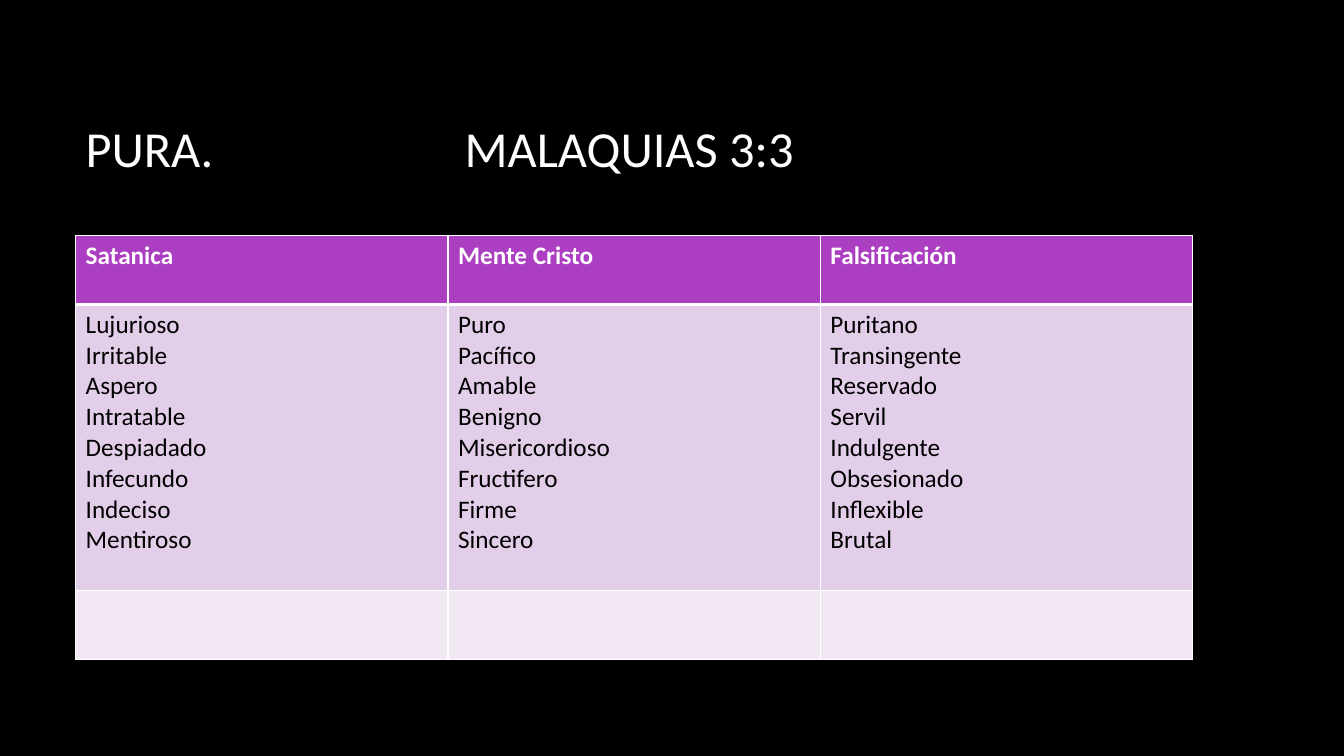
import pptx
import pptx.util
import pptx.dml.color
import pptx.enum.text
import pptx.oxml
import pptx.oxml.ns
from lxml import etree

Inches, Pt = pptx.util.Inches, pptx.util.Pt

# Content
TITLE = ("PURA.", "MALAQUIAS 3:3")
COLUMNS = {
    "Satanica": ["Lujurioso", "Irritable", "Aspero", "Intratable",
                 "Despiadado", "Infecundo", "Indeciso", "Mentiroso"],
    "Mente Cristo": ["Puro", "Pacífico", "Amable", "Benigno",
                     "Misericordioso", "Fructifero", "Firme", "Sincero"],
    "Falsificación": ["Puritano", "Transingente", "Reservado", "Servil",
                      "Indulgente", "Obsesionado", "Inflexible", "Brutal"],
}
COLORS = {"background": "000000", "light": "FFFFFF", "dark": "000000",
          "header": "AC3EC1", "body": "E3CEE9", "footer": "F1E8F4"}
FONT = "Calibri"
LEFT, WIDTH = 0.75, 11.08
TITLE_TOP, TITLE_HEIGHT, TITLE_TAB = 0.67, 1.59, 3.76
TABLE_TOP = 2.34
# Each row: height, fill, text colour, bold
ROWS = [(0.68, "header", "light", True),
        (2.84, "body", "dark", False),
        (0.68, "footer", "dark", False)]


def rgb(name):
    return pptx.dml.color.RGBColor.from_string(COLORS[name])


def style(p, size, color, bold=False):
    p.font.name, p.font.size, p.font.bold = FONT, Pt(size), bold
    p.font.color.rgb = rgb(color)


def add_borders(cell, bottom):
    tcPr = cell._tc.get_or_add_tcPr()
    for i, (side, width) in enumerate(
            [("lnL", 1), ("lnR", 1), ("lnT", 1), ("lnB", bottom)]):
        ln = pptx.oxml.parse_xml(
            f'<a:{side} {pptx.oxml.ns.nsdecls("a")} w="{Pt(width)}">'
            f'<a:solidFill><a:srgbClr val="{COLORS["light"]}"/></a:solidFill>'
            f'</a:{side}>')
        tcPr.insert(i, ln)


prs = pptx.Presentation()
prs.slide_width, prs.slide_height = Inches(13.33), Inches(7.5)
s = prs.slides.add_slide(prs.slide_layouts[6])
s.background.fill.solid()
s.background.fill.fore_color.rgb = rgb("background")

# Title, its second part set at a tab stop
sp = s.shapes.add_textbox(Inches(LEFT), Inches(TITLE_TOP),
                          Inches(WIDTH), Inches(TITLE_HEIGHT))
tf = sp.text_frame
tf.word_wrap = True
tf.vertical_anchor = pptx.enum.text.MSO_ANCHOR.MIDDLE
p = tf.paragraphs[0]
p.text = "\t".join(TITLE)
tabs = etree.SubElement(p._p.get_or_add_pPr(), pptx.oxml.ns.qn("a:tabLst"))
etree.SubElement(tabs, pptx.oxml.ns.qn("a:tab"),
                 pos=str(Inches(TITLE_TAB)), algn="l")
style(p, 36, "light")

# Table
height = sum(row[0] for row in ROWS)
table = s.shapes.add_table(len(ROWS), len(COLUMNS), Inches(LEFT),
                           Inches(TABLE_TOP), Inches(WIDTH),
                           Inches(height)).table
for r, (row_height, fill, color, bold) in enumerate(ROWS):
    table.rows[r].height = Inches(row_height)
    for c, (heading, words) in enumerate(COLUMNS.items()):
        cell = table.cell(r, c)
        cell.text = (heading, "\n".join(words), "")[r]
        cell.fill.solid()
        cell.fill.fore_color.rgb = rgb(fill)
        # The heavy rule under the header is shared with the row below
        add_borders(cell, bottom=3 if r == 0 else 1)
        if r == 1:
            cell._tc.tcPr.find(pptx.oxml.ns.qn("a:lnT")).set("w", str(Pt(3)))
        for p in cell.text_frame.paragraphs:
            style(p, 18, color, bold)

prs.save("out.pptx")
